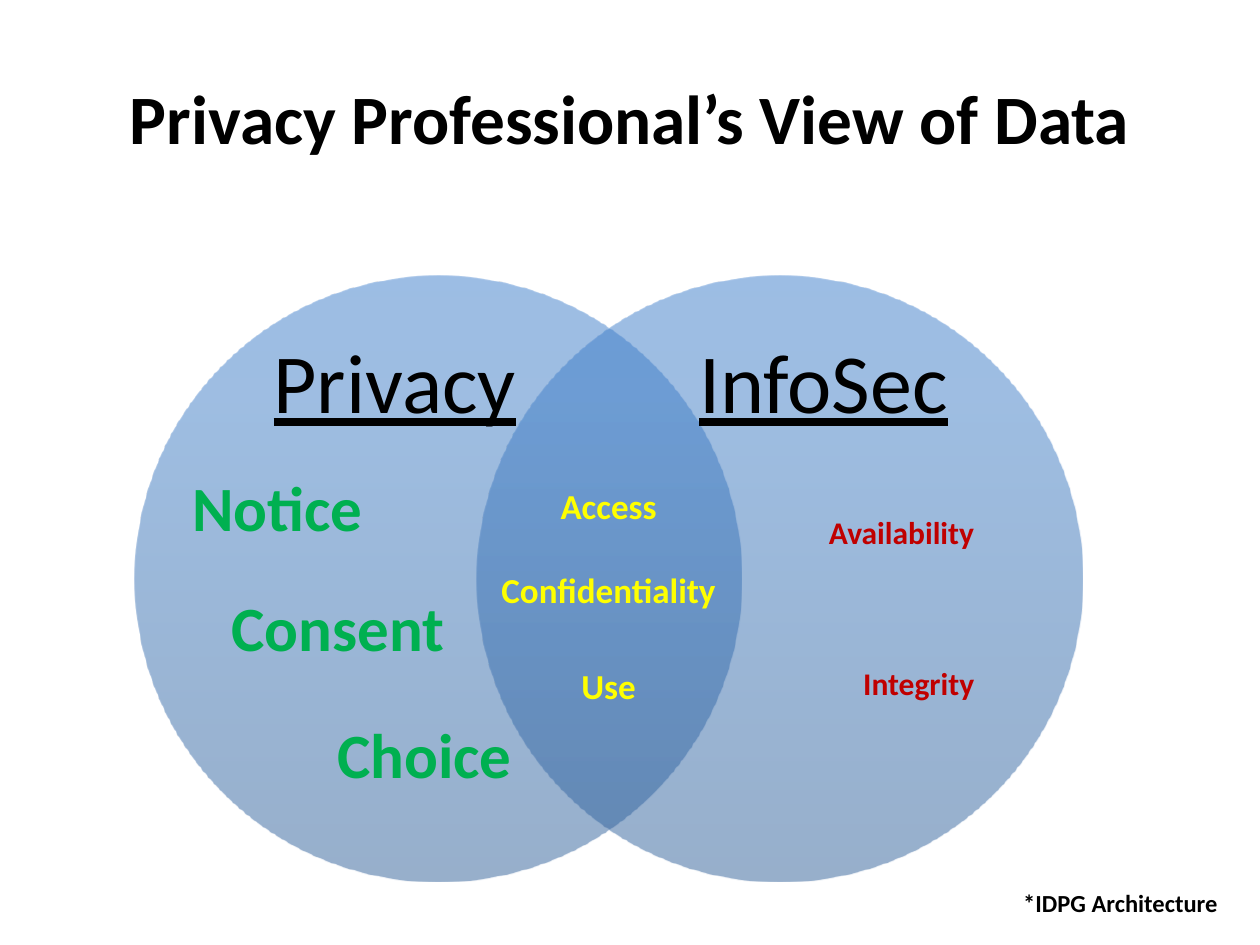
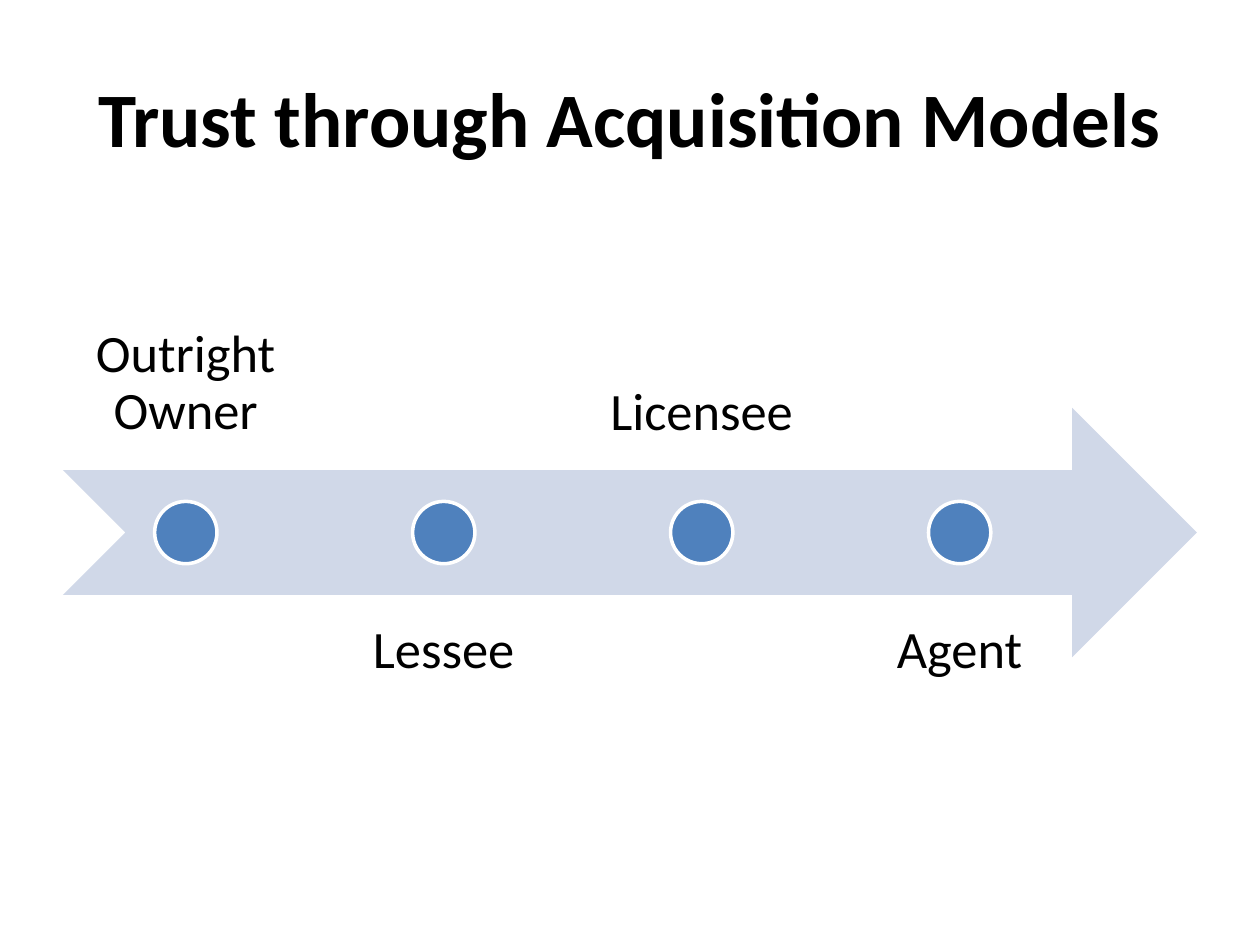
from lxml.etree import SubElement
from pptx import Presentation
from pptx.dml.color import RGBColor
from pptx.enum.shapes import MSO_SHAPE
from pptx.enum.text import MSO_ANCHOR, PP_ALIGN
from pptx.oxml.ns import qn
from pptx.util import Cm, Pt

BLACK = RGBColor(0x00, 0x00, 0x00)
WHITE = RGBColor(0xFF, 0xFF, 0xFF)
GREEN = RGBColor(0x00, 0xB0, 0x50)
YELLOW = RGBColor(0xFF, 0xFF, 0x00)
RED = RGBColor(0xC0, 0x00, 0x00)
DOT_BLUE = RGBColor(0x4F, 0x81, 0xBD)
ARROW_BLUE = RGBColor(0xD0, 0xD8, 0xE8)
CIRCLE_STOPS = [
    (0, RGBColor(0x2F, 0x5F, 0x99)),
    (80, RGBColor(0x3D, 0x7C, 0xC7)),
    (100, RGBColor(0x3A, 0x7C, 0xCB)),
]
FONT = "Calibri"


def add_text(slide, box, text, size, color=BLACK, bold=False, underline=False,
             align=PP_ALIGN.CENTER, anchor=MSO_ANCHOR.TOP,
             insets=(0.25, 0.13), spacing=None):
    """Add a one-run text box; box and insets are in centimetres."""
    tf = slide.shapes.add_textbox(*map(Cm, box)).text_frame
    tf.word_wrap = True
    tf.vertical_anchor = anchor
    tf.margin_left = tf.margin_right = Cm(insets[0])
    tf.margin_top = tf.margin_bottom = Cm(insets[1])
    p = tf.paragraphs[0]
    p.alignment = align
    p.line_spacing = spacing
    r = p.add_run()
    r.text = text
    r.font.name = FONT
    r.font.size = Pt(size)
    r.font.bold = bold
    r.font.underline = underline
    r.font.color.rgb = color


def add_plain_shape(slide, kind, box, fill=None):
    """Add a preset shape without shadow or outline."""
    sp = slide.shapes.add_shape(kind, *map(Cm, box))
    sp.shadow.inherit = False
    sp.line.fill.background()
    if fill is not None:
        sp.fill.solid()
        sp.fill.fore_color.rgb = fill
    return sp


def add_title(slide, text, size):
    """Add the centred bold slide title."""
    add_text(slide, (1.27, 0.76, 22.86, 3.18), text, size, bold=True,
             anchor=MSO_ANCHOR.MIDDLE)


def add_circle(slide, x, y, d):
    """Add a half-transparent circle with a vertical gradient."""
    sp = add_plain_shape(slide, MSO_SHAPE.OVAL, (x, y, d, d))
    sp.fill.gradient()
    sp.fill.gradient_angle = 90
    stops = next(sp.element.iter(qn("a:gsLst")))
    for gs in list(stops):
        stops.remove(gs)
    for pos, color in CIRCLE_STOPS:
        gs = SubElement(stops, qn("a:gs"), pos=str(pos * 1000))
        clr = SubElement(gs, qn("a:srgbClr"), val=str(color))
        SubElement(clr, qn("a:alpha"), val="50000")


def add_venn(slide, x, y, d, shift):
    """Draw two overlapping circles with their headings and words."""
    for i, (heading, left) in enumerate([("Privacy", 1.72), ("InfoSec", 10.36)]):
        add_circle(slide, x + i * shift, y, d)
        add_text(slide, (x + left, y + 1.1, 7.04, 2), heading, 48,
                 underline=True, anchor=MSO_ANCHOR.MIDDLE, insets=(0, 0))

    width = 6
    middle = (shift + d - width) / 2
    right = 17.17 - width
    groups = [
        (36, GREEN, PP_ALIGN.LEFT, 1.8,
         [("Notice", 0.91, 3.76), ("Consent", 1.7, 6.17), ("Choice", 3.83, 8.74)]),
        (20, YELLOW, PP_ALIGN.CENTER, 1.12,
         [("Access", middle, 4.07), ("Confidentiality", middle, 5.77),
          ("Use", middle, 7.7)]),
        (18, RED, PP_ALIGN.RIGHT, 1.02,
         [("Availability", right, 4.65), ("Integrity", right, 7.7)]),
    ]
    for size, color, align, height, words in groups:
        for word, left, top in words:
            add_text(slide, (x + left, y + top, width, height), word, size,
                     color, bold=True, align=align)


def add_timeline(slide, x, y, w, h, labels):
    """Draw an arrow with dots and labels alternating above and below."""
    band = 0.4 * h
    label_w, step = 4.95, 5.2
    dot = band / 4
    add_plain_shape(slide, MSO_SHAPE.NOTCHED_RIGHT_ARROW,
                    (x, y + 0.3 * h, w, band), ARROW_BLUE)
    for i, label in enumerate(labels):
        left = x + i * step
        below = i % 2 == 1
        add_text(slide, (left, y + below * (h - band), label_w, band), label, 30,
                 anchor=MSO_ANCHOR.TOP if below else MSO_ANCHOR.BOTTOM,
                 insets=(0.59, 0.59), spacing=0.9)
        sp = add_plain_shape(
            slide, MSO_SHAPE.OVAL,
            (left + (label_w - dot) / 2, y + (h - dot) / 2, dot, dot), DOT_BLUE)
        sp.line.color.rgb = WHITE
        sp.line.width = Pt(2)


def build_privacy_slide(slide):
    """Build the slide comparing privacy and security."""
    add_title(slide, "Privacy Professional’s View of Data", 39.6)
    add_venn(slide, 2.72, 5.56, 12.22, 6.88)
    add_text(slide, (18.8, 17.78, 6, 0.86), "*IDPG Architecture", 14, bold=True,
             align=PP_ALIGN.RIGHT)


def build_acquisition_slide(slide):
    """Build the slide with the acquisition models."""
    add_title(slide, "Trust through Acquisition Models", 44)
    add_timeline(slide, 1.27, 4.45, 22.86, 12.57,
                 ["Outright Owner", "Lessee", "Licensee", "Agent"])


def main():
    """Create and save the presentation."""
    prs = Presentation()
    prs.slide_width, prs.slide_height = Cm(25.4), Cm(19.05)
    for build in (build_privacy_slide, build_acquisition_slide):
        build(prs.slides.add_slide(prs.slide_layouts[6]))
    prs.save("out.pptx")


if __name__ == "__main__":
    main()
